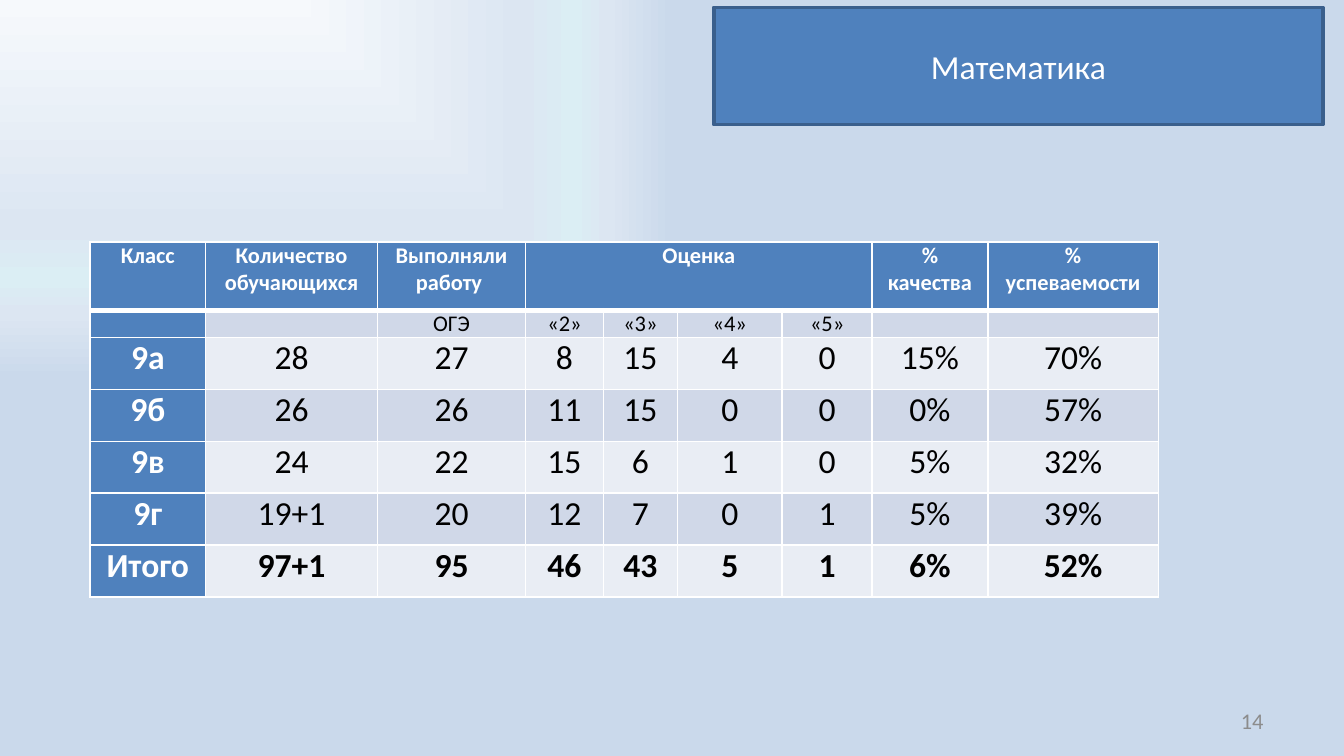
from typing import NamedTuple

from lxml.etree import SubElement
from pptx import Presentation
from pptx.dml.color import RGBColor
from pptx.enum.shapes import MSO_SHAPE as Shape
from pptx.enum.text import MSO_ANCHOR as Anchor, PP_ALIGN as Align
from pptx.oxml import parse_xml
from pptx.oxml.ns import nsdecls, qn
from pptx.util import Inches, Pt

# Widescreen, 16:9
WIDTH = Inches(10)
HEIGHT = WIDTH * 9 // 16
FONT = "Calibri"
COLORS = {
    "accent": "4F81BD", "accent_dark": "3A5F8C", "white": "FFFFFF",
    "black": "000000", "grey": "8C8C8C", "band_dark": "D0D8E8",
    "band_light": "E9EDF4",
}
BACKGROUND = [(0, "F6F9FC"), (60, "DCE6F2"), (74, "DBEEF4"),
              (83, "DCE6F2"), (100, "CAD9EB")]


class Box(NamedTuple):
    """Place and size in percent of the slide."""
    left: float
    top: float
    width: float
    height: float

    def lengths(self) -> tuple:
        return (share(self.left, WIDTH), share(self.top, HEIGHT),
                share(self.width, WIDTH), share(self.height, HEIGHT))


class Style(NamedTuple):
    size: int
    color: str
    bold: bool = False
    align: Align = Align.CENTER


# Table grid in percent of the slide's width and height
COLUMNS = [8.6, 12.8, 11, 5.8, 5.5, 7.8, 6.7, 8.6, 12.7]
ROWS = [9.07, 3.6] + [6.86] * 5
TABLE = Box(6.7, 32, sum(COLUMNS), sum(ROWS))
RESULTS = [
    ["Класс", "Количество обучающихся", "Выполняли работу ", "Оценка",
     "", "", "", "% качества", "% успеваемости"],
    ["", "", "ОГЭ", "«2»", "«3»", "«4»", "«5»", "", ""],
    ["9а", "28", "27", "8", "15", "4", "0", "15%", "70%"],
    ["9б", "26", "26", "11", "15", "0", "0", "0%", "57%"],
    ["9в", "24", "22", "15", "6", "1", "0", "5%", "32%"],
    ["9г", "19+1", "20", "12", "7", "0", "1", "5%", "39%"],
    ["Итого", "97+1", "95", "46", "43", "5", "1", "6%", "52%"],
]


def share(percent: float, whole: int) -> int:
    return round(whole * percent / 100)


def rgb(name: str) -> RGBColor:
    return RGBColor.from_string(COLORS[name])


def write(tf, text: str, style: Style) -> None:
    p = tf.paragraphs[0]
    p.alignment = style.align
    if not text:  # keeps an empty cell from growing its row
        SubElement(p._p, qn("a:endParaRPr"), sz=str(style.size * 100))
        return
    r = p.add_run()
    r.text = text
    r.font.name, r.font.size, r.font.bold = FONT, Pt(style.size), style.bold
    r.font.color.rgb = rgb(style.color)


def set_background(s) -> None:
    stops = "".join(f'<a:gs pos="{pos * 1000}"><a:srgbClr val="{color}"/></a:gs>'
                    for pos, color in BACKGROUND)
    s._element.cSld.insert(0, parse_xml(
        f'<p:bg {nsdecls("p", "a")}><p:bgPr><a:gradFill rotWithShape="1">'
        f'<a:gsLst>{stops}</a:gsLst><a:path path="rect">'
        '<a:fillToRect r="100000" b="100000"/></a:path></a:gradFill>'
        '<a:effectLst/></p:bgPr></p:bg>'))


def add_title(s, box: Box, text: str) -> None:
    sp = s.shapes.add_shape(Shape.RECTANGLE, *box.lengths())
    sp.shadow.inherit = False
    sp.fill.solid()
    sp.fill.fore_color.rgb = rgb("accent")
    sp.line.color.rgb = rgb("accent_dark")
    sp.line.width = Pt(2)
    sp.text_frame.vertical_anchor = Anchor.MIDDLE
    write(sp.text_frame, text, Style(18, "white"))


def add_page_number(s, box: Box, text: str) -> None:
    tf = s.shapes.add_textbox(*box.lengths()).text_frame
    tf.word_wrap = True
    tf.vertical_anchor = Anchor.MIDDLE
    write(tf, text, Style(12, "grey", align=Align.RIGHT))


def set_borders(cell, row: int) -> None:
    # A thick rule separates the header from the rows below
    widths = {"L": 1, "R": 1, "T": 3 if row == 1 else 1, "B": 3 if row == 0 else 1}
    for side, width in widths.items():
        ln = SubElement(cell._tc.get_or_add_tcPr(), qn(f"a:ln{side}"),
                        w=str(Pt(width)))
        fill = SubElement(ln, qn("a:solidFill"))
        SubElement(fill, qn("a:srgbClr"), val=COLORS["white"])


def fill_cell(cell, text: str, row: int, col: int) -> None:
    heading = row == 0 or col == 0
    band = "band_dark" if row % 2 else "band_light"
    cell.margin_left = cell.margin_right = Inches(0.07)
    cell.margin_top = cell.margin_bottom = 0
    set_borders(cell, row)
    cell.fill.solid()
    cell.fill.fore_color.rgb = rgb("accent" if heading else band)
    write(cell.text_frame, text, Style(
        size=12 if row < 2 else 18,
        color="white" if heading else "black",
        bold=heading or row == len(RESULTS) - 1))


def add_results(s) -> None:
    table = s.shapes.add_table(len(ROWS), len(COLUMNS), *TABLE.lengths()).table
    for column, width in zip(table.columns, COLUMNS):
        column.width = share(width, WIDTH)
    for row, height in zip(table.rows, ROWS):
        row.height = share(height, HEIGHT)
    for i, texts in enumerate(RESULTS):
        for j, text in enumerate(texts):
            fill_cell(table.cell(i, j), text, i, j)
    # One heading over the four grades
    table.cell(0, 3).merge(table.cell(0, 6))


def main() -> None:
    prs = Presentation()
    prs.slide_width, prs.slide_height = WIDTH, HEIGHT
    s = prs.slides.add_slide(prs.slide_layouts[6])
    set_background(s)
    add_page_number(s, Box(71.7, 92.7, 23.3, 5.34), "14")
    add_title(s, Box(53.1, 1, 45.35, 15.47), "Математика")
    add_results(s)
    prs.save("out.pptx")


if __name__ == "__main__":
    main()
